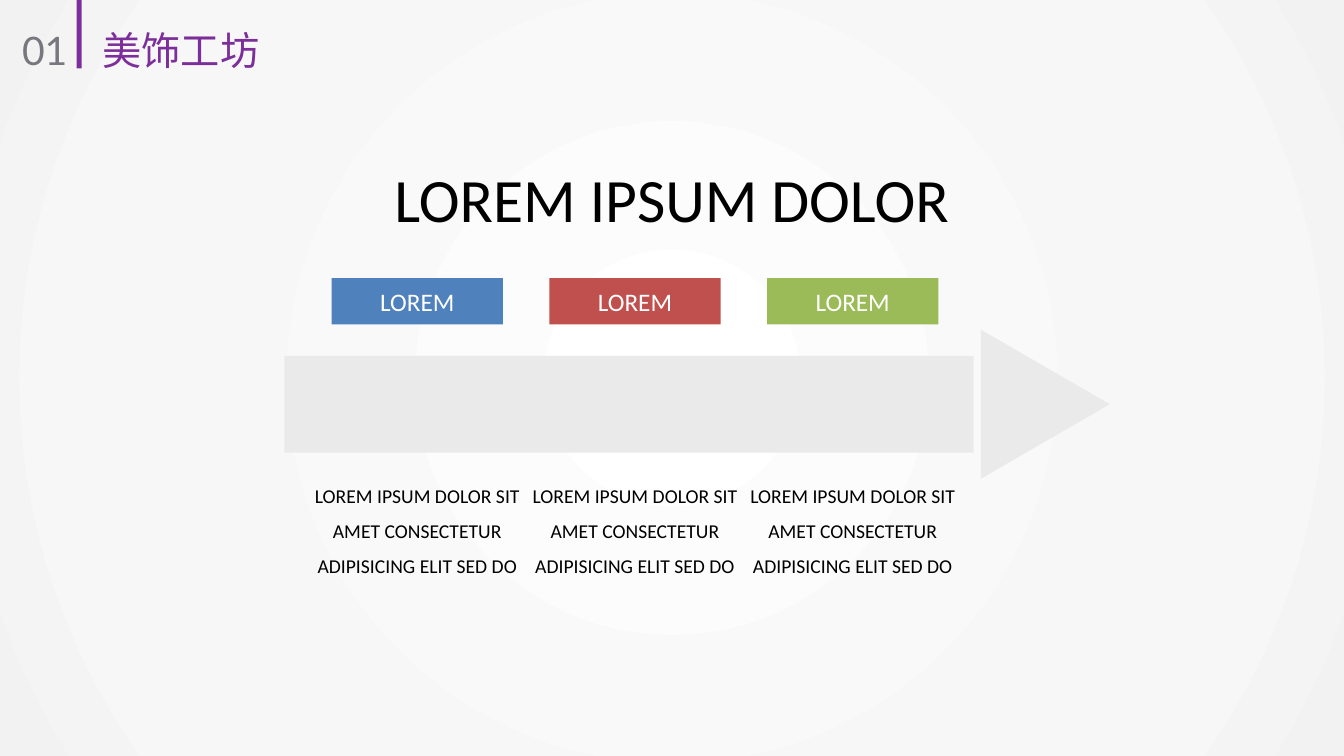
from lxml import etree
from pptx import Presentation
from pptx.dml.color import RGBColor
from pptx.enum import shapes, text
from pptx.oxml import ns
from pptx.util import Pt

TITLE = "LOREM IPSUM DOLOR"
SECTION_NUMBER = "01"
SECTION_NAME = "美饰工坊"
BODY = "LOREM IPSUM DOLOR SIT AMET CONSECTETUR ADIPISICING ELIT SED DO"
STEPS = [("LOREM", BODY, "4F81BD"), ("LOREM", BODY, "C0504D"), ("LOREM", BODY, "9BBB59")]
BACKGROUND_STOPS = [(0, "FFFFFF"), (50, "F9F9F9"), (77, "F7F7F7"), (100, "F2F2F2")]
ARROW_PARTS = [
    [(203.04, 254.16), (695.52, 254.16), (695.52, 323.28), (203.04, 323.28)],
    [(700.56, 235.44), (792.72, 288.72), (700.56, 342)],
]
PURPLE = "7C2E9A"
STEP_LEFT, STEP_PITCH = 236.88, 155.52
LABEL_WIDTH, BODY_WIDTH = 122.4, 146.88


def paint(target, color):
    target.solid()
    target.fore_color.rgb = RGBColor.from_string(color)


def finish(shape, color):
    shape.shadow.inherit = False
    paint(shape.fill, color)
    shape.line.fill.background()


def write(shape, words, size, color, font="Calibri", align=text.PP_ALIGN.CENTER,
          anchor=text.MSO_ANCHOR.MIDDLE, spacing=None):
    frame = shape.text_frame
    frame.word_wrap = True
    frame.vertical_anchor = anchor
    paragraph = frame.paragraphs[0]
    paragraph.alignment = align
    if spacing:
        paragraph.line_spacing = spacing
    run = paragraph.add_run()
    run.text = words
    run.font.size = Pt(size)
    run.font.name = font
    run.font.color.rgb = RGBColor.from_string(color)
    east_asian = etree.SubElement(run.font._element, ns.qn("a:ea"))
    east_asian.set("typeface", font)


def add_box(slide, left, top, width, height, color):
    shape = slide.shapes.add_shape(shapes.MSO_SHAPE.RECTANGLE,
                                   Pt(left), Pt(top), Pt(width), Pt(height))
    finish(shape, color)
    return shape


def add_text(slide, left, top, width, height):
    return slide.shapes.add_textbox(Pt(left), Pt(top), Pt(width), Pt(height))


def set_background(slide):
    paint(slide.background.fill, "FFFFFF")
    solid = slide.element.find(".//" + ns.qn("p:bgPr")).find(ns.qn("a:solidFill"))
    gradient = etree.Element(ns.qn("a:gradFill"), rotWithShape="1")
    stops = etree.SubElement(gradient, ns.qn("a:gsLst"))
    for percent, color in BACKGROUND_STOPS:
        stop = etree.SubElement(stops, ns.qn("a:gs"), pos=str(percent * 1000))
        etree.SubElement(stop, ns.qn("a:srgbClr"), val=color)
    circle = etree.SubElement(gradient, ns.qn("a:path"), path="circle")
    etree.SubElement(circle, ns.qn("a:fillToRect"), l="50000", t="50000", r="50000", b="50000")
    solid.getparent().replace(solid, gradient)


def add_arrow(slide):
    outlines = [[(Pt(x), Pt(y)) for x, y in part] for part in ARROW_PARTS]
    shaft, head = outlines
    builder = slide.shapes.build_freeform(*shaft[0])
    builder.add_line_segments(shaft[1:], close=True)
    builder.move_to(*head[0])
    builder.add_line_segments(head[1:], close=True)
    finish(builder.convert_to_shape(), "EAEAEA")


def add_step(slide, index, label, body, color):
    left = STEP_LEFT + index * STEP_PITCH
    write(add_box(slide, left, 198.72, LABEL_WIDTH, 33.12, color), label, 18, "FFFFFF")
    caption = add_text(slide, left - (BODY_WIDTH - LABEL_WIDTH) / 2, 336.96, BODY_WIDTH, 205.2)
    frame = caption.text_frame
    frame.margin_left = frame.margin_right = frame.margin_top = frame.margin_bottom = 0
    write(caption, body, 14, "000000", anchor=text.MSO_ANCHOR.TOP, spacing=1.5)


def add_header(slide):
    add_box(slide, 54.72, 0, 3.6, 48.96, PURPLE)
    for left, width, words, color, font in [
        (8.64, 51.84, SECTION_NUMBER, "78777D", "Lato"),
        (66.24, 442.08, SECTION_NAME, PURPLE, "Noto Sans CJK SC"),
    ]:
        write(add_text(slide, left, 15.12, width, 41.04), words, 28, color, font,
              text.PP_ALIGN.LEFT, text.MSO_ANCHOR.TOP)


def main():
    presentation = Presentation()
    presentation.slide_width, presentation.slide_height = Pt(960), Pt(540)
    slide = presentation.slides.add_slide(presentation.slide_layouts[6])
    set_background(slide)
    add_arrow(slide)
    for index, step in enumerate(STEPS):
        add_step(slide, index, *step)
    write(add_text(slide, 48, 96.48, 864, 90), TITLE, 44, "000000")
    add_header(slide)
    presentation.save("out.pptx")


if __name__ == "__main__":
    main()
